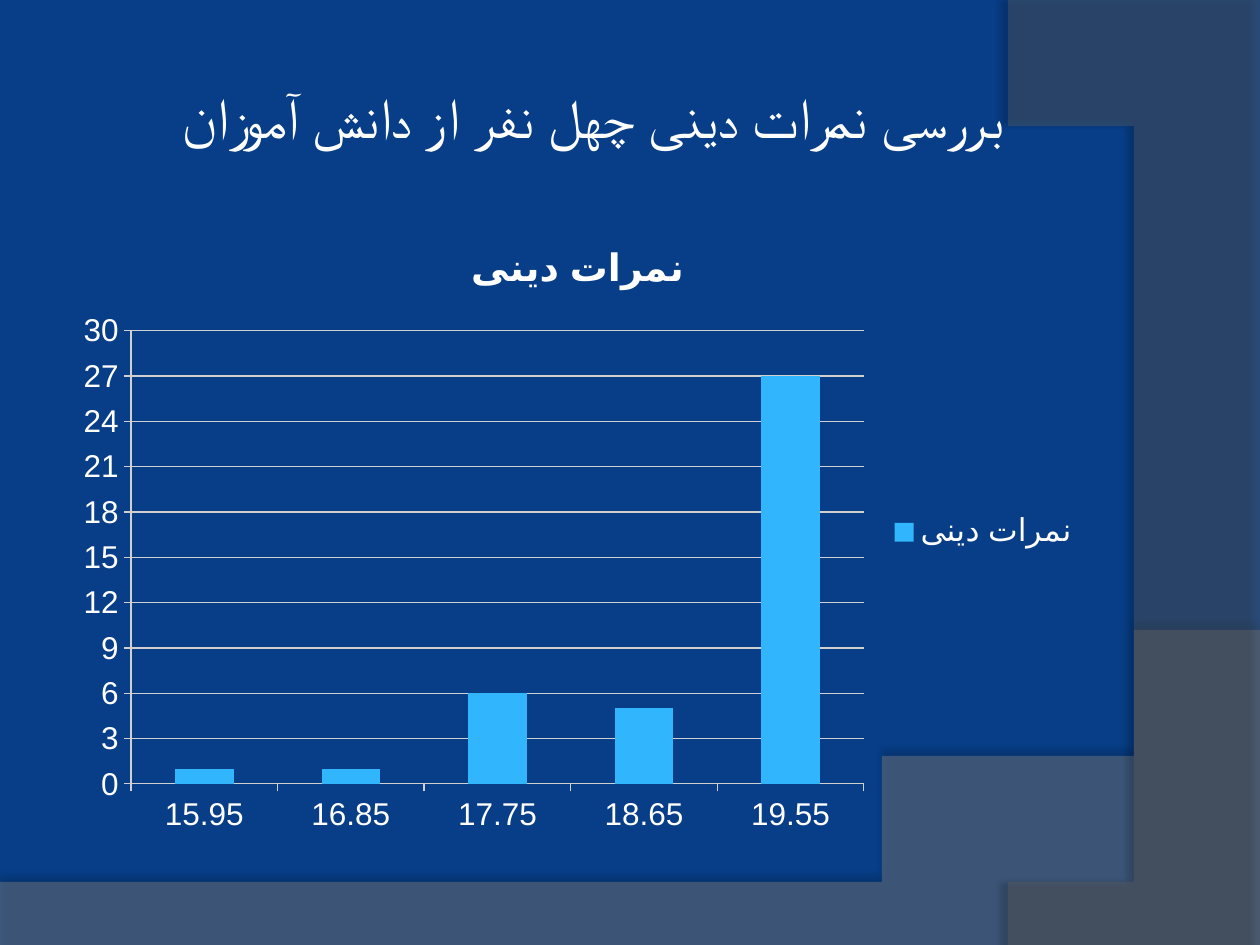
from lxml import etree
from pptx import Presentation
from pptx import util as u
from pptx.chart.data import CategoryChartData
from pptx.dml.color import RGBColor
from pptx.enum import chart as ch, text
from pptx.oxml.ns import qn

FONT = "Lato"
WHITE, GRID, BAR = "FFFFFF", "D0D0D0", "31B6FD"
GRADES = {"15.95": 1, "16.85": 1, "17.75": 6, "18.65": 5, "19.55": 27}


def paint(fill, color):
    fill.solid()
    fill.fore_color.rgb = RGBColor.from_string(color)


def sub(parent, tag, **attrs):
    return etree.SubElement(parent, qn(tag), {k: str(v) for k, v in attrs.items()})


def bezier(a, b, c, d, steps=60):
    """Return the points of a cubic curve after its start a."""
    points = []
    for i in range(1, steps + 1):
        t = i / steps
        s = 1 - t
        points.append(tuple(
            s**3 * p + 3 * s * s * t * q + 3 * s * t * t * r + t**3 * v
            for p, q, r, v in zip(a, b, c, d)))
    return points


def add_wave(slide, points, color, alpha, shade, dist, angle):
    """Add a translucent outline that casts a soft shadow."""
    pen = slide.shapes.build_freeform(*points[0], scale=u.Inches(1))
    pen.add_line_segments(points[1:], close=True)
    wave = pen.convert_to_shape()
    wave.line.fill.background()
    paint(wave.fill, color)
    props = wave.element.spPr
    sub(props.find(".//" + qn("a:srgbClr")), "a:alpha", val=alpha * 1000)
    glow = sub(sub(props, "a:effectLst"), "a:outerShdw", blurRad=u.Pt(4),
               dist=u.Pt(dist), dir=angle * 60000, algn="ctr", rotWithShape=0)
    sub(sub(glow, "a:srgbClr", val="000000"), "a:alpha", val=shade * 1000)


def add_backdrop(slide, wide, high):
    paint(slide.background.fill, "073E87")
    floor = [(0, 7.05), (0, high), (wide, high), (wide, 5.2)]
    floor += bezier(floor[-1], (5.59, 7.29), (3.91, 7.19), floor[0])
    add_wave(slide, floor, "7F7F7F", 45, 35, 3.5, 270)
    side = [(wide, 0.02), (wide, high), (8.21, high)]
    side += bezier(side[-1], (9.35, 6.19), (10.18, 3), (8, 0))
    add_wave(slide, side, "5E5E5E", 40, 45, 4, 180)


def add_title(slide, box, words):
    frame = slide.shapes.add_textbox(*map(u.Inches, box)).text_frame
    frame.word_wrap = True
    frame.vertical_anchor = text.MSO_ANCHOR.MIDDLE
    frame.margin_left = frame.margin_right = u.Inches(0.05)
    para = frame.paragraphs[0]
    para.alignment = text.PP_ALIGN.CENTER
    para._p.get_or_add_pPr().set("rtl", "1")
    run = para.add_run()
    run.text = words
    run.font.size = u.Pt(32)
    run.font.name = FONT
    paint(run.font.fill, WHITE)
    sub(run.font._element, "a:cs", typeface=FONT)


def style_axis(axis):
    axis.major_tick_mark = ch.XL_TICK_MARK.OUTSIDE
    axis.minor_tick_mark = ch.XL_TICK_MARK.NONE
    axis.format.line.width = u.Pt(0.75)
    paint(axis.format.line.fill, GRID)


def add_bars(slide, box, name):
    data = CategoryChartData()
    data.categories = list(GRADES)
    data.add_series(name, list(GRADES.values()))
    chart = slide.shapes.add_chart(
        ch.XL_CHART_TYPE.COLUMN_CLUSTERED, *map(u.Inches, box), data).chart
    chart.font.size = u.Pt(18)
    chart.font.name = "Arial"
    paint(chart.font.fill, WHITE)

    chart.has_title = True
    run = chart.chart_title.text_frame.paragraphs[0].add_run()
    run.text = name
    run.font.size = u.Pt(21.6)
    run.font.bold = True
    paint(run.font.fill, WHITE)
    chart.has_legend = True
    chart.legend.position = ch.XL_LEGEND_POSITION.RIGHT
    chart.legend.include_in_layout = False

    style_axis(chart.category_axis)
    axis = chart.value_axis
    style_axis(axis)
    axis.minimum_scale, axis.maximum_scale, axis.major_unit = 0, 30, 3
    axis.has_major_gridlines = True
    grid = axis.major_gridlines.format.line
    grid.width = u.Pt(0.75)
    paint(grid.fill, GRID)

    plot = chart.plots[0]
    plot.gap_width = 150
    plot.vary_by_categories = False
    paint(plot.series[0].format.fill, BAR)


def main():
    deck = Presentation()
    wide, high = 10, 7.5
    deck.slide_width, deck.slide_height = u.Inches(wide), u.Inches(high)
    slide = deck.slides.add_slide(deck.slide_layouts[6])
    add_backdrop(slide, wide, high)
    add_title(slide, (0.5, 0.3, 8.42, 1.25), "بررسی نمرات دینی چهل نفر از دانش آموزان")
    add_bars(slide, (0.5, 1.75, 8.17, 4.95), "نمرات دینی")
    deck.save("out.pptx")


if __name__ == "__main__":
    main()
